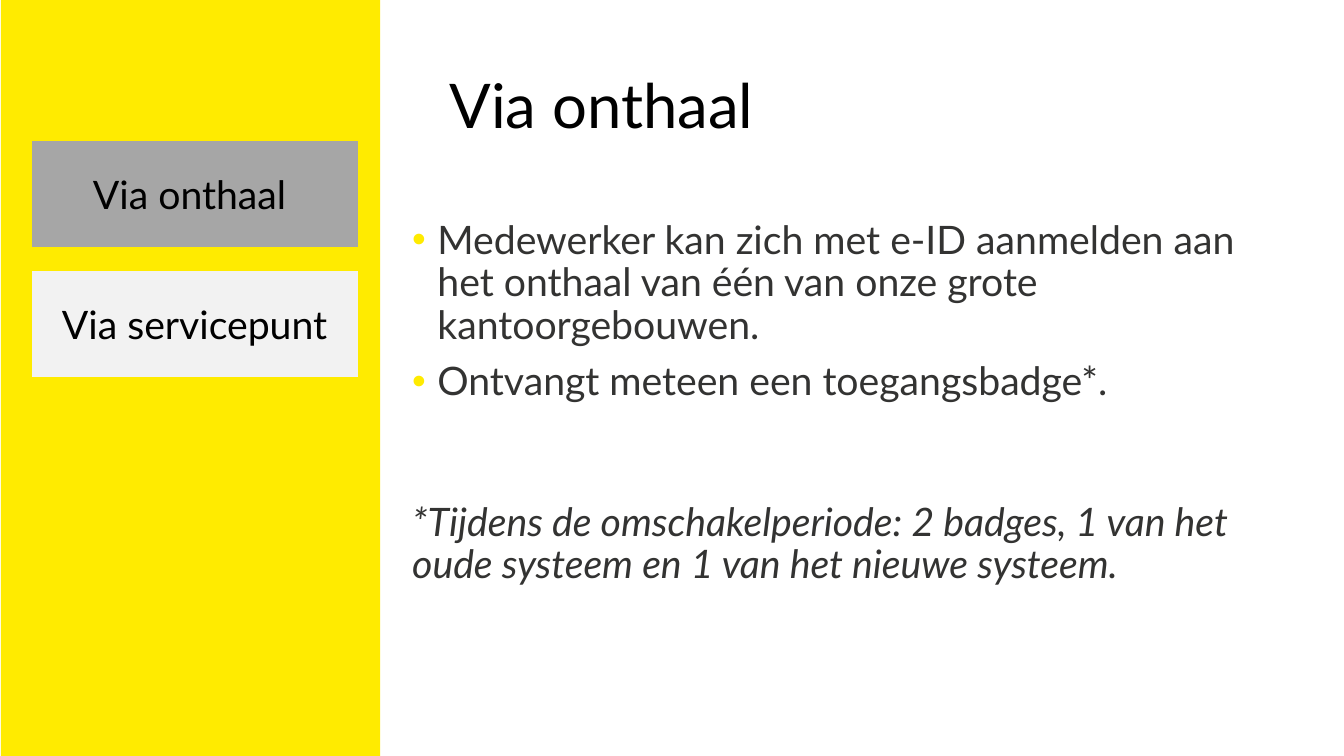
import pptx
import pptx.util
import pptx.dml.color
import pptx.enum.shapes
import pptx.enum.text
from lxml import etree
from pptx.util import Inches, Pt

COLORS = {
    "yellow": "FFEB00",
    "active": "A6A6A6",
    "inactive": "F2F2F2",
    "black": "000000",
    "text": "333332",
}


def add_block(slide, left, top, width, height, color):
    shape = slide.shapes.add_shape(
        pptx.enum.shapes.MSO_SHAPE.RECTANGLE,
        Inches(left), Inches(top), Inches(width), Inches(height))
    shape.shadow.inherit = False
    shape.fill.solid()
    shape.fill.fore_color.rgb = pptx.dml.color.RGBColor.from_string(COLORS[color])
    shape.line.fill.background()
    return shape


def set_text(paragraph, text, size, color):
    paragraph.text = text
    paragraph.font.name = "Lato"
    paragraph.font.size = Pt(size)
    paragraph.font.color.rgb = pptx.dml.color.RGBColor.from_string(COLORS[color])


presentation = pptx.Presentation()
presentation.slide_width = Inches(13.33)
presentation.slide_height = Inches(7.5)
slide = presentation.slides.add_slide(presentation.slide_layouts[6])

# Sidebar with its two menu buttons
add_block(slide, 0.01, 0, 3.76, 7.5, "yellow")
buttons = [("Via onthaal", 0.37, 1.4, "active"),
           ("Via servicepunt", 0.42, 2.69, "inactive")]
for label, label_left, top, color in buttons:
    add_block(slide, 0.32, top, 3.23, 1.05, color)
    label_shape = add_block(slide, label_left, top + 0.24, 3.02, 0.57, color)
    frame = label_shape.text_frame
    frame.word_wrap = True
    frame.auto_size = pptx.enum.text.MSO_AUTO_SIZE.SHAPE_TO_FIT_TEXT
    frame.vertical_anchor = pptx.enum.text.MSO_ANCHOR.TOP
    set_text(frame.paragraphs[0], label, 28, "black")
    frame.paragraphs[0].alignment = pptx.enum.text.PP_ALIGN.CENTER

# Title
title = slide.shapes.add_textbox(Inches(4.36), Inches(0.35), Inches(8.5), Inches(1.45))
title.text_frame.word_wrap = True
title.text_frame.vertical_anchor = pptx.enum.text.MSO_ANCHOR.MIDDLE
set_text(title.text_frame.paragraphs[0], "Via onthaal", 44, "black")
title.text_frame.paragraphs[0].line_spacing = 0.9

# Body: two bullets and a footnote set apart by its spacing
body = slide.shapes.add_textbox(Inches(3.99), Inches(2.14), Inches(8.49), Inches(4.76))
body.text_frame.word_wrap = True
body_lines = [
    ("Medewerker kan zich met e-ID aanmelden aan het onthaal van één van onze "
     "grote kantoorgebouwen.", True, 0),
    ("Ontvangt meteen een toegangsbadge*.", True, 10),
    ("*Tijdens de omschakelperiode: 2 badges, 1 van het oude systeem en 1 van "
     "het nieuwe systeem.", False, 70.5),
]
for index, (text, bulleted, space_before) in enumerate(body_lines):
    paragraph = body.text_frame.paragraphs[0] if index == 0 else body.text_frame.add_paragraph()
    set_text(paragraph, text, 28, "text")
    paragraph.line_spacing = 0.9
    paragraph.space_before = Pt(space_before)
    if not bulleted:
        paragraph.font.italic = True
        continue
    properties = paragraph._p.get_or_add_pPr()
    properties.set("marL", str(Inches(0.25)))
    properties.set("indent", str(Inches(-0.25)))
    namespace = pptx.oxml.ns.nsdecls("a")
    bullet_parts = [
        f'<a:buClr {namespace}><a:srgbClr val="{COLORS["yellow"]}"/></a:buClr>',
        f'<a:buFont {namespace} typeface="Arial"/>',
        f'<a:buChar {namespace} char="•"/>',
    ]
    # Bullet settings come before the default run properties
    run_defaults = properties.find(pptx.oxml.ns.qn("a:defRPr"))
    for part in bullet_parts:
        run_defaults.addprevious(etree.fromstring(part))

presentation.save("out.pptx")
